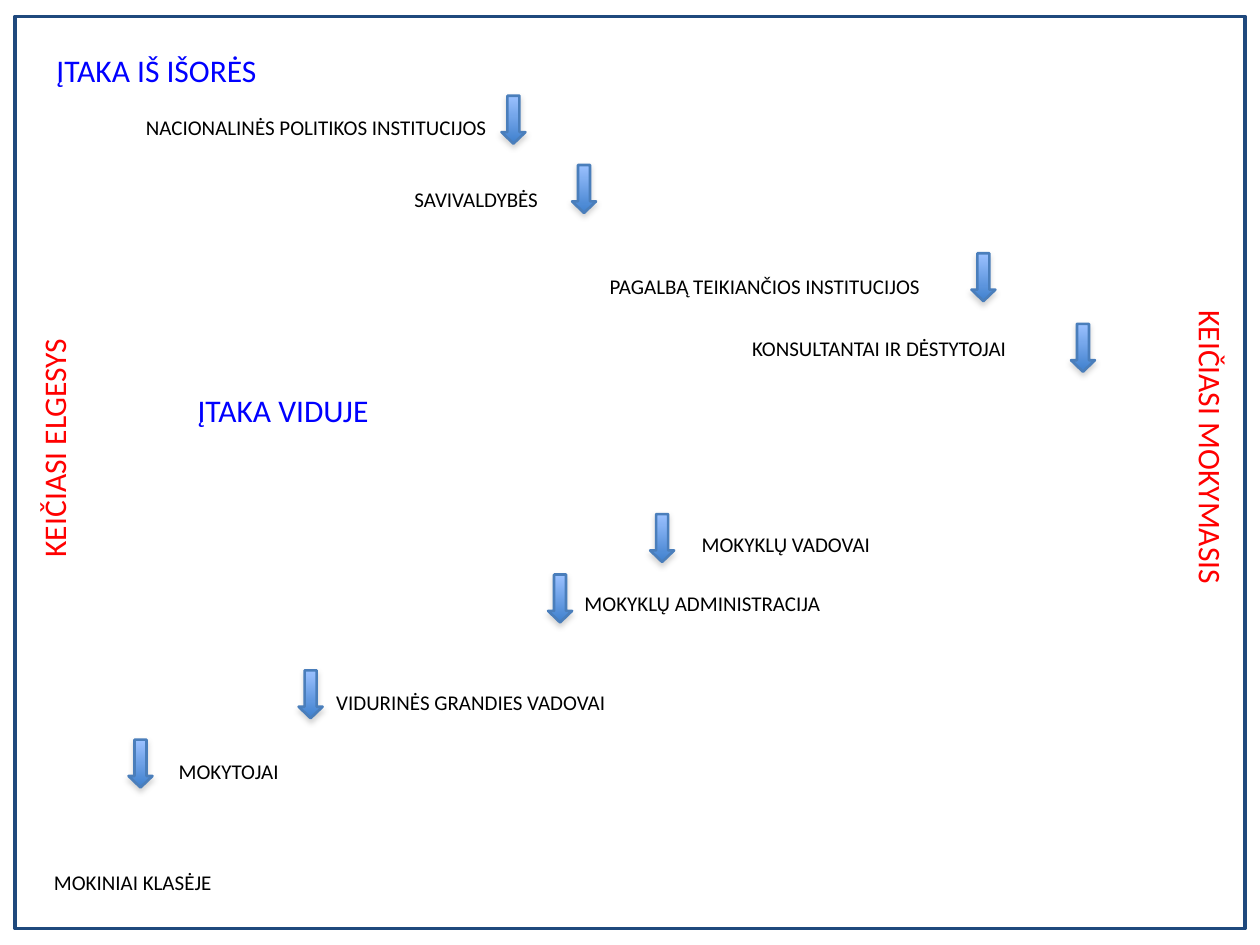
import lxml.etree
import pptx
import pptx.dml.color
import pptx.enum.shapes
import pptx.enum.text
import pptx.oxml.ns
import pptx.util

Inches = pptx.util.Inches
Pt = pptx.util.Pt
RGBColor = pptx.dml.color.RGBColor
SHAPE = pptx.enum.shapes.MSO_SHAPE
ALIGN = pptx.enum.text.PP_ALIGN
qn = pptx.oxml.ns.qn

NAVY = RGBColor(0x1F, 0x49, 0x7D)
BLUE = RGBColor(0x00, 0x00, 0xFF)
RED = RGBColor(0xFF, 0x00, 0x00)
BLACK = RGBColor(0x00, 0x00, 0x00)
ARROW_TOP = RGBColor(0x9B, 0xC1, 0xFF)
ARROW_BOTTOM = RGBColor(0x3F, 0x80, 0xCD)
ARROW_LINE = RGBColor(0x4A, 0x7E, 0xBB)
SHADOW = RGBColor(0x80, 0x80, 0x80)

LABEL = {"name": "Calibri", "size": Pt(12), "color": BLACK}
HEADING = {"name": "Calibri", "size": Pt(18), "color": BLUE}
SIDE = {"name": "Calibri", "size": Pt(18), "color": RED}
BODY = {"line_spacing": 1.15, "space_after": Pt(10)}
MARGINS = ("margin_left", "margin_top", "margin_right", "margin_bottom")
ARROW_SIZE = (0.19, 0.38)

OUTSIDE = [
    ("NACIONALINĖS POLITIKOS INSTITUCIJOS", (1.06, 0.78, 3, 0.44), (3.98, 0.76)),
    ("SAVIVALDYBĖS", (3.19, 1.35, 1.31, 0.33), (4.54, 1.31)),
    ("PAGALBĄ TEIKIANČIOS INSTITUCIJOS", (4.74, 2.04, 3.02, 0.45), (7.71, 2.01)),
    ("KONSULTANTAI IR DĖSTYTOJAI", (5.87, 2.53, 2.52, 0.39), (8.5, 2.57)),
]
INSIDE = [
    ("MOKYKLŲ VADOVAI", (5.47, 4.09, 2.05, 0.36), (5.16, 4.08)),
    ("MOKYKLŲ ADMINISTRACIJA", (4.54, 4.56, 3.12, 0.46), (4.35, 4.56)),
    ("VIDURINĖS GRANDIES VADOVAI", (2.57, 5.34, 3.21, 0.36), (2.37, 5.32)),
    ("MOKYTOJAI", (1.32, 5.89, 1.56, 0.39), (1.02, 5.87)),
    ("MOKINIAI KLASĖJE", (0.33, 6.77, 3.06, 0.39), None),
]


def inches(box):
    """Turn a box of numbers into lengths."""
    return [Inches(v) for v in box]


def set_format(obj, values):
    """Set each attribute named in a dict of format values."""
    for name, value in values.items():
        if name == "color":
            obj.color.rgb = value
        else:
            setattr(obj, name, value)


def add_text(slide, box, text, font, para=BODY):
    """Add a wrapped one-paragraph text box with even margins."""
    tf = slide.shapes.add_textbox(*inches(box)).text_frame
    set_format(tf, {"word_wrap": True, **dict.fromkeys(MARGINS, Inches(0.1))})
    p = tf.paragraphs[0]
    set_format(p, para)
    r = p.add_run()
    r.text = text
    set_format(r.font, font)
    return tf


def add_arrow(slide, left, top):
    """Add a shaded down arrow with a soft shadow."""
    sp = slide.shapes.add_shape(SHAPE.DOWN_ARROW, *inches((left, top, *ARROW_SIZE)))
    sp.adjustments[0] = 0.5
    sp.adjustments[1] = 0.48
    sp.fill.gradient()
    sp.fill.gradient_angle = 270
    for stop, color in zip(sp.fill.gradient_stops, (ARROW_TOP, ARROW_BOTTOM)):
        stop.color.rgb = color
    set_format(sp.line, {"width": Pt(1.5)})
    sp.line.color.rgb = ARROW_LINE
    sp.shadow.inherit = False
    effects = sp._element.spPr.find(qn("a:effectLst"))
    shadow = lxml.etree.SubElement(
        effects, qn("a:outerShdw"), blurRad=str(Pt(3)), dist=str(Pt(2)),
        dir="5400000", rotWithShape="0")
    color = lxml.etree.SubElement(shadow, qn("a:srgbClr"), val=str(SHADOW))
    lxml.etree.SubElement(color, qn("a:alpha"), val="35000")


def add_frame(slide, box):
    """Add the unfilled border of the slide."""
    sp = slide.shapes.add_shape(SHAPE.RECTANGLE, *inches(box))
    sp.shadow.inherit = False
    sp.fill.background()
    sp.line.color.rgb = NAVY
    sp.line.width = Pt(2)


def add_steps(slide, steps):
    """Add the labels of one group of influences and their arrows."""
    for text, box, arrow in steps:
        add_text(slide, box, text, LABEL)
        if arrow:
            add_arrow(slide, *arrow)


def add_side(slide, box, text, direction):
    """Add a centred heading that runs along a side of the slide."""
    tf = add_text(slide, box, text, SIDE, {**BODY, "alignment": ALIGN.CENTER})
    tf._txBody.bodyPr.set("vert", direction)


def main():
    """Build and save the slide."""
    prs = pptx.Presentation()
    prs.slide_width, prs.slide_height = Inches(10), Inches(7.5)
    slide = prs.slides.add_slide(prs.slide_layouts.get_by_name("Blank"))
    add_frame(slide, (0.12, 0.13, 9.76, 7.24))
    tf = add_text(slide, (0.35, 0.36, 1.86, 0.4), "ĮTAKA IŠ IŠORĖS", HEADING, {})
    set_format(tf, {"word_wrap": False, "margin_top": Inches(0.05),
                    "margin_bottom": Inches(0.05)})
    add_steps(slide, OUTSIDE)
    add_text(slide, (1.47, 2.96, 1.64, 0.36), "ĮTAKA VIDUJE", HEADING)
    add_steps(slide, INSIDE)
    add_side(slide, (0.18, 2.34, 0.35, 2.43), "KEIČIASI ELGESYS", "vert270")
    add_side(slide, (9.51, 2.17, 0.35, 2.76), "KEIČIASI MOKYMASIS", "vert")
    prs.save("out.pptx")


if __name__ == "__main__":
    main()
